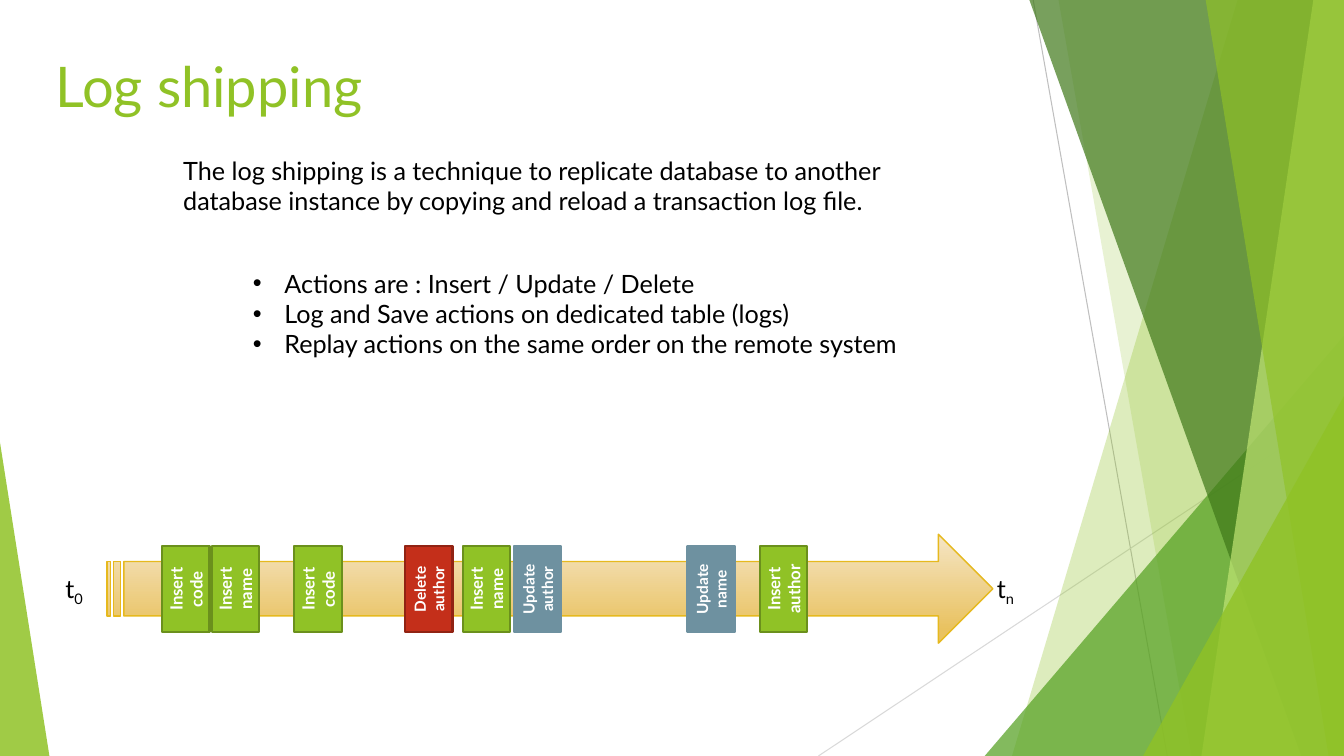
import pptx
import pptx.util
import pptx.dml.color
import pptx.enum.shapes
import pptx.enum.text
import pptx.oxml
import pptx.oxml.ns
import lxml.etree

Pt = pptx.util.Pt
Shape = pptx.enum.shapes.MSO_SHAPE
Align = pptx.enum.text.PP_ALIGN
Anchor = pptx.enum.text.MSO_ANCHOR
qn = pptx.oxml.ns.qn

WIDTH, HEIGHT = 960, 540
FONT = "Lato"
COLORS = {
    "black": "000000",
    "white": "FFFFFF",
    "line": "BFBFBF",
    "pale line": "D9D9D9",
    "green": "90C226",
    "green edge": "6B901C",
    "leaf": "54A021",
    "forest": "3F7819",
    "lime": "C0E474",
    "red": "C42F1A",
    "red edge": "912313",
    "slate": "6E91A0",
    "sand": "F5E5C5",
    "amber": "E9C260",
    "gold": "E6B91E",
}
ACTIONS = {
    "Insert": ("green", "green edge", 12),
    "Update": ("slate", "slate", 11),
    "Delete": ("red", "red edge", 11),
}


class Painter:
    def __init__(self, page):
        self.page = page
        self.shapes = page.shapes

    def rgb(self, name):
        return pptx.dml.color.RGBColor.from_string(COLORS[name])

    def format(self, para, size, color, bold=False):
        for span in para.runs:
            span.font.name = FONT
            span.font.size = Pt(size)
            span.font.bold = bold
            span.font.color.rgb = self.rgb(color)

    def title(self, text, left, top, width, height):
        box = self.shapes.title
        box.left, box.top, box.width, box.height = map(Pt, (left, top, width, height))
        frame = box.text_frame
        frame.text = text
        frame.vertical_anchor = Anchor.BOTTOM
        frame.paragraphs[0].alignment = Align.LEFT
        self.format(frame.paragraphs[0], 40, "green")

    def text(self, lines, left, top, width, height, bullets=False):
        box = self.shapes.add_textbox(*map(Pt, (left, top, width, height)))
        frame = box.text_frame
        frame.word_wrap = True
        frame.text = "\n".join(lines)
        for para in frame.paragraphs:
            self.format(para, 18, "black")
            if bullets:
                props = para._p.get_or_add_pPr()
                props.set("marL", str(Pt(22.5)))
                props.set("indent", str(-Pt(22.5)))
                lxml.etree.SubElement(props, qn("a:buFont")).set("typeface", "Arial")
                lxml.etree.SubElement(props, qn("a:buChar")).set("char", "•")
        return box

    def time_label(self, index, left):
        box = self.text(["t"], left, 406, 34, 29)
        para = box.text_frame.paragraphs[0]
        span = para.add_run()
        span.text = index
        self.format(para, 18, "black")
        span._r.get_or_add_rPr().set("baseline", "-25000")

    def line(self, start, end, color):
        connector = self.shapes.add_connector(
            pptx.enum.shapes.MSO_CONNECTOR.STRAIGHT, *map(Pt, start + end))
        connector.line.color.rgb = self.rgb(color)
        connector.line.width = Pt(0.75)
        lxml.etree.SubElement(connector._element.spPr, qn("a:effectLst"))

    def tint(self, shape, color, opacity):
        shape.shadow.inherit = False
        shape.line.fill.background()
        shape.fill.solid()
        shape.fill.fore_color.rgb = self.rgb(color)
        tone = shape._element.spPr.find(qn("a:solidFill"))[0]
        lxml.etree.SubElement(tone, qn("a:alpha")).set("val", str(opacity * 1000))

    def band(self, top_x, bottom_x, color, opacity):
        corners = [(WIDTH, -0.6), (WIDTH, HEIGHT), (bottom_x, HEIGHT)]
        outline = self.shapes.build_freeform(Pt(top_x), Pt(-0.6))
        outline.add_line_segments([(Pt(x), Pt(y)) for x, y in corners])
        self.tint(outline.convert_to_shape(), color, opacity)

    def triangle(self, left, top, width, apex, color, opacity):
        shape = self.shapes.add_shape(
            Shape.ISOSCELES_TRIANGLE, *map(Pt, (left, top, width, HEIGHT - top)))
        shape.adjustments[0] = apex
        self.tint(shape, color, opacity)

    def timeline(self, left, top, width, height):
        arrow = self.shapes.add_shape(
            Shape.STRIPED_RIGHT_ARROW, *map(Pt, (left, top, width, height)))
        arrow.shadow.inherit = False
        arrow.fill.gradient()
        arrow.fill.gradient_angle = 270
        stops = zip(arrow.fill.gradient_stops, (0, 0.88), ("sand", "amber"))
        for stop, position, color in stops:
            stop.position = position
            stop.color.rgb = self.rgb(color)
        arrow.line.color.rgb = self.rgb("gold")
        arrow.line.width = Pt(1)

    def action(self, label, left):
        fill, edge, size = ACTIONS[label.split()[0]]
        box = self.shapes.add_shape(
            Shape.RECTANGLE, *map(Pt, (left, 403.9, 61.2, 33.8)))
        box.rotation = 270
        box.shadow.inherit = False
        box.fill.solid()
        box.fill.fore_color.rgb = self.rgb(fill)
        box.line.color.rgb = self.rgb(edge)
        box.line.width = Pt(1.5)
        frame = box.text_frame
        frame.word_wrap = True
        frame.vertical_anchor = Anchor.MIDDLE
        frame.text = label
        frame.paragraphs[0].alignment = Align.CENTER
        self.format(frame.paragraphs[0], size, "white", True)


def main():
    deck = pptx.Presentation()
    deck.slide_width, deck.slide_height = Pt(WIDTH), Pt(HEIGHT)
    painter = Painter(deck.slides.add_slide(deck.slide_layouts[5]))

    painter.line((738, 0), (833.8, HEIGHT), "line")
    painter.line((WIDTH, 290.2), (584.6, HEIGHT), "pale line")
    painter.band(884.2, 722.9, "green", 30)
    painter.band(756, 851, "green", 20)
    painter.triangle(703.4, 239.8, 256.6, 1, "leaf", 72)
    painter.band(735.1, 929.5, "forest", 70)
    painter.band(938.2, 858.2, "lime", 70)
    painter.band(861.1, 949, "green", 65)
    painter.triangle(816.5, 283, 143.5, 1, "green", 80)
    painter.triangle(0, 316.1, 35.3, 0, "green", 85)

    painter.title("Log shipping", 32.4, 23.8, 676.8, 64.8)
    painter.text(
        ["The log shipping is a technique to replicate database to another "
         "database instance by copying and reload a transaction log file."],
        123.8, 107.3, 537.8, 51.1)
    painter.text(
        ["Actions are : Insert / Update / Delete",
         "Log and Save actions on dedicated table (logs)",
         "Replay actions on the same order on the remote system"],
        173.5, 187.9, 506.9, 94.3, bullets=True)

    painter.timeline(76.3, 381.6, 632.9, 77.8)
    for label, left in [
        ("Insert code", 102.2),
        ("Insert name", 137.5),
        ("Insert code", 196.6),
        ("Delete author", 275.8),
        ("Insert name", 316.8),
        ("Update author", 353.5),
        ("Update name", 477.4),
        ("Insert author", 529.2),
    ]:
        painter.action(label, left)
    painter.time_label("0", 39.6)
    painter.time_label("n", 704.9)

    deck.save("out.pptx")


if __name__ == "__main__":
    main()
